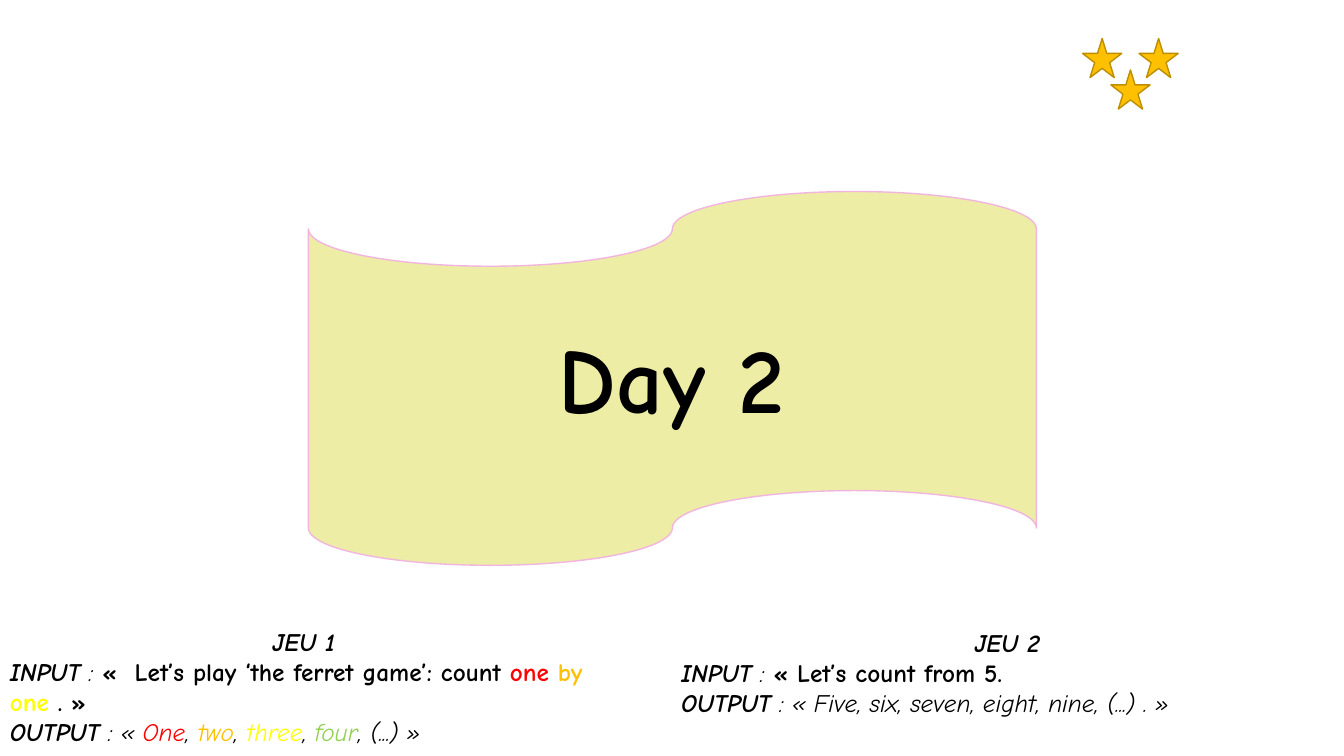
from dataclasses import dataclass

from pptx import Presentation
from pptx.dml.color import RGBColor
from pptx.enum.shapes import MSO_SHAPE
from pptx.enum.text import MSO_ANCHOR, PP_ALIGN
from pptx.util import Pt


@dataclass(frozen=True)
class Theme:
    font: str = "Comic Neue"
    title_size: int = 66
    game_size: int = 18
    black: str = "000000"
    red: str = "FF0000"
    orange: str = "FFC000"
    yellow: str = "FFFF00"
    green: str = "92D050"
    tape: str = "EDEDA6"
    tape_edge: str = "F1B5E0"
    star_edge: str = "BD8E00"


THEME = Theme()
BOLD, ITALIC, BOTH = (True, False), (False, True), (True, True)


def add_figure(shapes, preset, box, fill, edge=None):
    figure = shapes.add_shape(preset, *map(Pt, box))
    figure.shadow.inherit = False
    figure.fill.solid()
    figure.fill.fore_color.rgb = RGBColor.from_string(fill)
    if edge:
        figure.line.color.rgb = RGBColor.from_string(edge)
        figure.line.width = Pt(1)
    else:
        figure.line.fill.background()
    return figure


def set_font(paragraph, size):
    paragraph.font.name = THEME.font
    paragraph.font.size = Pt(size)


def add_banner(slide, title):
    banner = slide.shapes.add_group_shape().shapes
    add_figure(banner, MSO_SHAPE.FLOWCHART_PUNCHED_TAPE,
               (220.3, 136.8, 520, 267), THEME.tape, THEME.tape_edge)
    label = add_figure(banner, MSO_SHAPE.RECTANGLE, (232.6, 226, 494, 87), THEME.tape)
    frame = label.text_frame
    frame.word_wrap = True
    frame.vertical_anchor = MSO_ANCHOR.TOP
    heading = frame.paragraphs[0]
    heading.text = title
    heading.alignment = PP_ALIGN.CENTER
    set_font(heading, THEME.title_size)
    heading.font.bold = True
    heading.font.color.rgb = RGBColor.from_string(THEME.black)


def add_game(slide, box, name, prompt, answer):
    frame = slide.shapes.add_textbox(*map(Pt, box)).text_frame
    frame.word_wrap = True
    lines = [
        [(name, BOTH)],
        [("INPUT", BOTH), (" :", ITALIC)] + [(text, BOLD, *color) for text, *color in prompt],
        [("OUTPUT", BOTH), (" : ", ITALIC)] + [(text, ITALIC, *color) for text, *color in answer],
    ]
    for index, line in enumerate(lines):
        paragraph = frame.add_paragraph() if index else frame.paragraphs[0]
        paragraph.alignment = PP_ALIGN.LEFT if index else PP_ALIGN.CENTER
        set_font(paragraph, THEME.game_size)
        for text, (bold, italic), *color in line:
            run = paragraph.add_run()
            run.text = text
            run.font.bold = bold
            run.font.italic = italic
            run.font.color.rgb = RGBColor.from_string(color[0] if color else THEME.black)


def main():
    deck = Presentation()
    deck.slide_width, deck.slide_height = Pt(960), Pt(540)
    slide = deck.slides.add_slide(deck.slide_layouts[6])

    add_banner(slide, "Day 2")
    for left, top in ((773.3, 27.5), (813.6, 27.5), (793.5, 50)):
        add_figure(slide.shapes, MSO_SHAPE.STAR_5_POINT, (left, top, 28, 28),
                   THEME.orange, THEME.star_edge)

    add_game(slide, (479.5, 444.2, 480, 73), "JEU 2",
             [(" « Let’s count from 5. ",)],
             [("« Five, six, seven, eight, nine, (...) . »",)])
    add_game(slide, (0, 443.5, 434, 94), "JEU 1",
             [(" «  Let’s play ‘the ferret game’: count ",), ("one ", THEME.red),
              ("by ", THEME.orange), ("one", THEME.yellow), (" . »",)],
             [("« ",), ("One", THEME.red), (", ",), ("two", THEME.orange), (", ",),
              ("three", THEME.yellow), (", ",), ("four", THEME.green), (", (...) »",)])

    deck.save("out.pptx")


if __name__ == "__main__":
    main()
